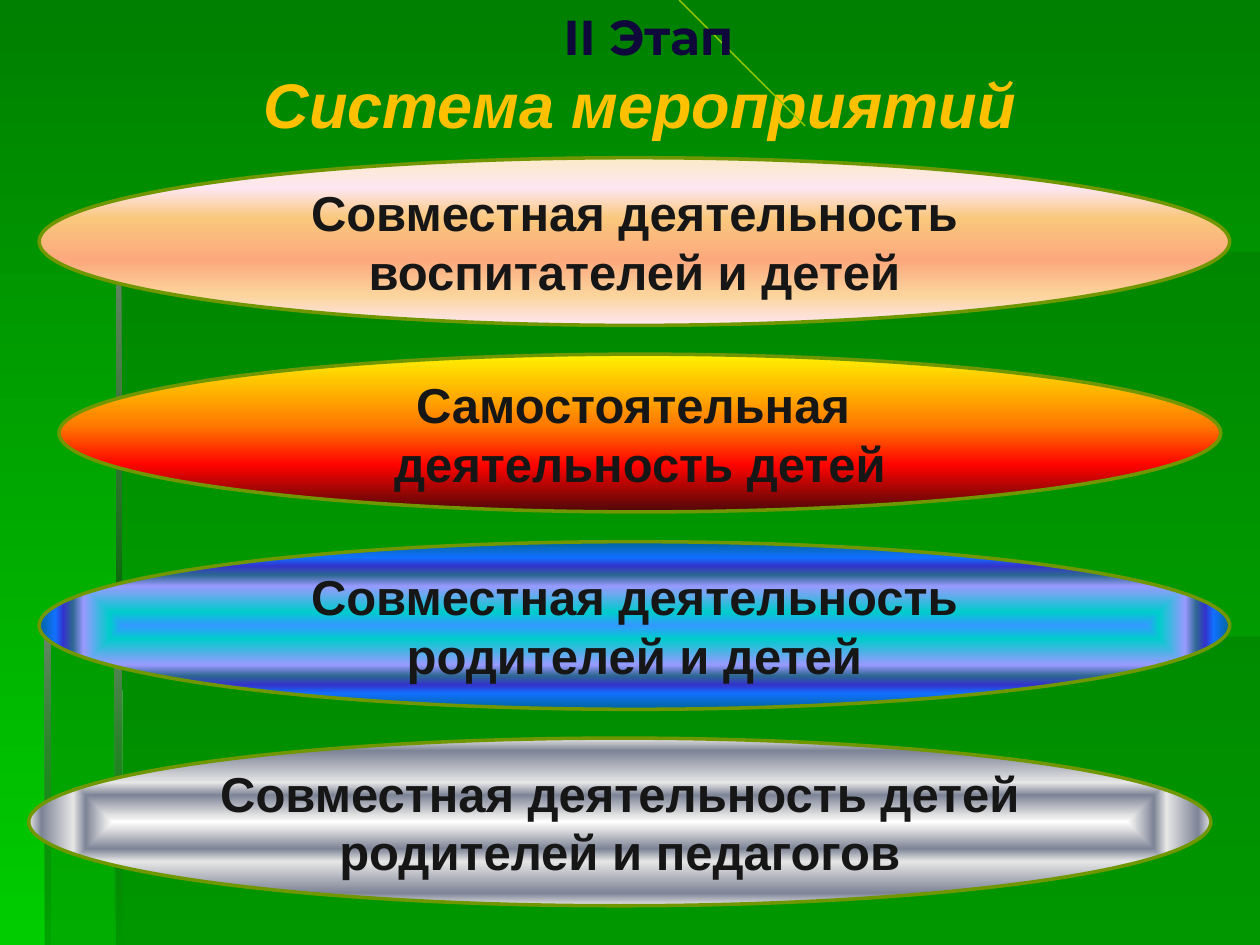
from lxml import etree
from pptx import Presentation
from pptx import util as u
from pptx.dml.color import RGBColor
from pptx.enum import shapes, text
from pptx.oxml import ns

GREEN = RGBColor(0x00, 0x80, 0x00)
LIME = RGBColor(0x00, 0xCC, 0x00)
SHADE = RGBColor(0x00, 0x66, 0x00)
DEEP = RGBColor(0x00, 0x5E, 0x00)
SAGE = RGBColor(0x66, 0x86, 0x66)
OLIVE = RGBColor(0x71, 0x97, 0x00)
LEAF = RGBColor(0x96, 0xC8, 0x00)
GOLD = RGBColor(0xFF, 0xC0, 0x00)
NAVY = RGBColor(0x0F, 0x08, 0x3A)
INK = RGBColor(0x16, 0x16, 0x16)
CREAM = RGBColor(0xFB, 0xEA, 0xC7)
BLUSH = RGBColor(0xFE, 0xE7, 0xF2)
SAND = RGBColor(0xFA, 0xC7, 0x7D)
PEACH = RGBColor(0xFB, 0xA9, 0x7D)
WHEAT = RGBColor(0xFB, 0xD4, 0x9C)
LEMON = RGBColor(0xFF, 0xF2, 0x00)
FLAME = RGBColor(0xFF, 0x7A, 0x00)
RED = RGBColor(0xFF, 0x03, 0x00)
WINE = RGBColor(0x4D, 0x08, 0x08)
SKY = RGBColor(0x33, 0x99, 0xFF)
TEAL = RGBColor(0x00, 0xCC, 0xCC)
LILAC = RGBColor(0x99, 0x99, 0xFF)
STEEL = RGBColor(0x2E, 0x67, 0x92)
ROYAL = RGBColor(0x33, 0x33, 0xCC)
BLUE = RGBColor(0x11, 0x70, 0xFF)
OCEAN = RGBColor(0x00, 0x66, 0x99)
WHITE = RGBColor(0xFF, 0xFF, 0xFF)
PEARL = RGBColor(0xE6, 0xE6, 0xE6)
SLATE = RGBColor(0x7D, 0x84, 0x96)

WIDE, HIGH = 25.4, 19.05

DAWN = [(0, CREAM), (18, BLUSH), (36, SAND), (61, PEACH), (82, WHEAT), (100, BLUSH)]
FIRE = [(0, LEMON), (45, FLAME), (70, RED), (100, WINE)]
SEA = [(0, SKY), (16, TEAL), (47, LILAC), (60, STEEL), (71, ROYAL), (81, BLUE), (100, OCEAN)]
CHROME = [(0, WHITE), (7, PEARL), (32, SLATE), (47, PEARL), (85, SLATE), (100, PEARL)]
FADE = [(0, SHADE, 0), (100, DEEP)]

PANELS = [
    [(2.34, 12.83), (2.34, HIGH), (WIDE, HIGH), (WIDE, 12.83)],
    [(2.39, 12.85), (0.91, 12.85), (0.91, HIGH), (WIDE, HIGH), (WIDE, 5.08), (2.39, 5.08)],
]
EDGES = [
    ([(2.34, 5.08), (2.34, 5.21), (22.63, 5.21), (22.63, 5.08)], FADE, 0),
    ([(2.34, 5.08), (2.34, 12.95), (2.46, 12.95), (2.44, 5.18)],
     [(0, SAGE), (100, SHADE)], 90),
    ([(2.31, HIGH), (2.46, HIGH), (2.44, 12.9), (2.31, 12.8)],
     [(0, SAGE), (100, SHADE, 0)], 90),
    ([(0.89, 12.8), (0.89, 12.93), (13.59, 12.93), (13.59, 12.8)], FADE, 0),
    ([(0.89, 12.8), (0.89, HIGH), (1.02, HIGH), (1.02, 12.93)],
     [(0, SAGE), (100, SHADE, 10)], 90),
]


def add(host, tag, **attrs):
    return etree.SubElement(host, ns.qn(tag), {k: str(v) for k, v in attrs.items()})


def blend(fill, host, stops, angle):
    fill.gradient()
    grad = host.find(".//" + ns.qn("a:gradFill"))
    grad.clear()
    grad.set("rotWithShape", "1")
    group = add(grad, "a:gsLst")
    for pos, color, *alpha in stops:
        tint = add(add(group, "a:gs", pos=pos * 1000), "a:srgbClr", val=color)
        if alpha:
            add(tint, "a:alpha", val=alpha[0] * 1000)
    if angle is None:
        shade = add(grad, "a:path", path="shape")
        add(shade, "a:fillToRect", l=50000, t=50000, r=50000, b=50000)
    else:
        add(grad, "a:lin", ang=angle * 60000, scaled=0)


def write(frame, words, size=28, font="Arial", color=INK, italic=False,
          anchor=text.MSO_ANCHOR.TOP):
    frame.word_wrap = True
    frame.vertical_anchor = anchor
    for spot, line in enumerate(words.split("\n")):
        para = frame.add_paragraph() if spot else frame.paragraphs[0]
        para.alignment = text.PP_ALIGN.CENTER
        run = para.add_run()
        run.text = line
        run.font.size = u.Pt(size)
        run.font.name = font
        run.font.bold = True
        run.font.italic = italic
        run.font.color.rgb = color


class Deck:
    def __init__(self):
        self.show = Presentation()
        self.show.slide_width, self.show.slide_height = u.Cm(WIDE), u.Cm(HIGH)
        self.slide = self.show.slides.add_slide(self.show.slide_layouts[6])
        self.items = self.slide.shapes
        self.rim = OLIVE

    def ground(self, stops):
        blend(self.slide.background.fill, self.slide.element, stops, 90)

    def outline(self, points):
        first, *rest = [(u.Cm(x), u.Cm(y)) for x, y in points]
        pen = self.items.build_freeform(*first)
        pen.add_line_segments(rest, close=True)
        shape = pen.convert_to_shape()
        shape.shadow.inherit = False
        shape.line.fill.background()
        return shape

    def panel(self, points):
        shape = self.outline(points)
        shape.fill.solid()
        shape.fill.fore_color.rgb = SHADE
        add(shape.element.find(".//" + ns.qn("a:srgbClr")), "a:alpha", val=30000)

    def edge(self, points, stops, angle):
        shape = self.outline(points)
        blend(shape.fill, shape.element, stops, angle)

    def oval(self, words, box, stops, angle=None):
        shape = self.items.add_shape(shapes.MSO_SHAPE.OVAL, *map(u.Cm, box))
        shape.shadow.inherit = False
        blend(shape.fill, shape.element, stops, angle)
        shape.line.color.rgb = self.rim
        shape.line.width = u.Pt(2)
        write(shape.text_frame, words, anchor=text.MSO_ANCHOR.MIDDLE)

    def label(self, words, box, **style):
        write(self.items.add_textbox(*map(u.Cm, box)).text_frame, words, **style)

    def line(self, *ends):
        link = self.items.add_connector(shapes.MSO_CONNECTOR.STRAIGHT, *map(u.Cm, ends))
        link.line.color.rgb = LEAF
        link.line.width = u.Pt(0.75)
        add(link.element.spPr, "a:effectLst")


def main():
    deck = Deck()
    deck.ground([(0, GREEN), (100, LIME)])
    for points in PANELS:
        deck.panel(points)
    for points, stops, angle in EDGES:
        deck.edge(points, stops, angle)
    deck.label("Система мероприятий", (0.4, 1.19, 25, 1.8), size=36, color=GOLD, italic=True)
    deck.oval("Совместная деятельность воспитателей и детей", (0.79, 3.18, 24, 3.38), DAWN, 90)
    deck.oval("Совместная деятельность родителей и детей", (0.79, 10.92, 24, 3.38), SEA)
    deck.oval("Самостоятельная \nдеятельность детей", (1.19, 7.14, 23.42, 3.18), FIRE, 90)
    deck.line(13.69, 0, 16.23, 2.54)
    deck.oval("Совместная деятельность детей родителей и педагогов",
              (0.58, 14.88, 23.83, 3.38), CHROME)
    deck.label("II Этап", (1.57, 0, 23.01, 1.45), font="Montserrat", color=NAVY)
    deck.show.save("out.pptx")


if __name__ == "__main__":
    main()
